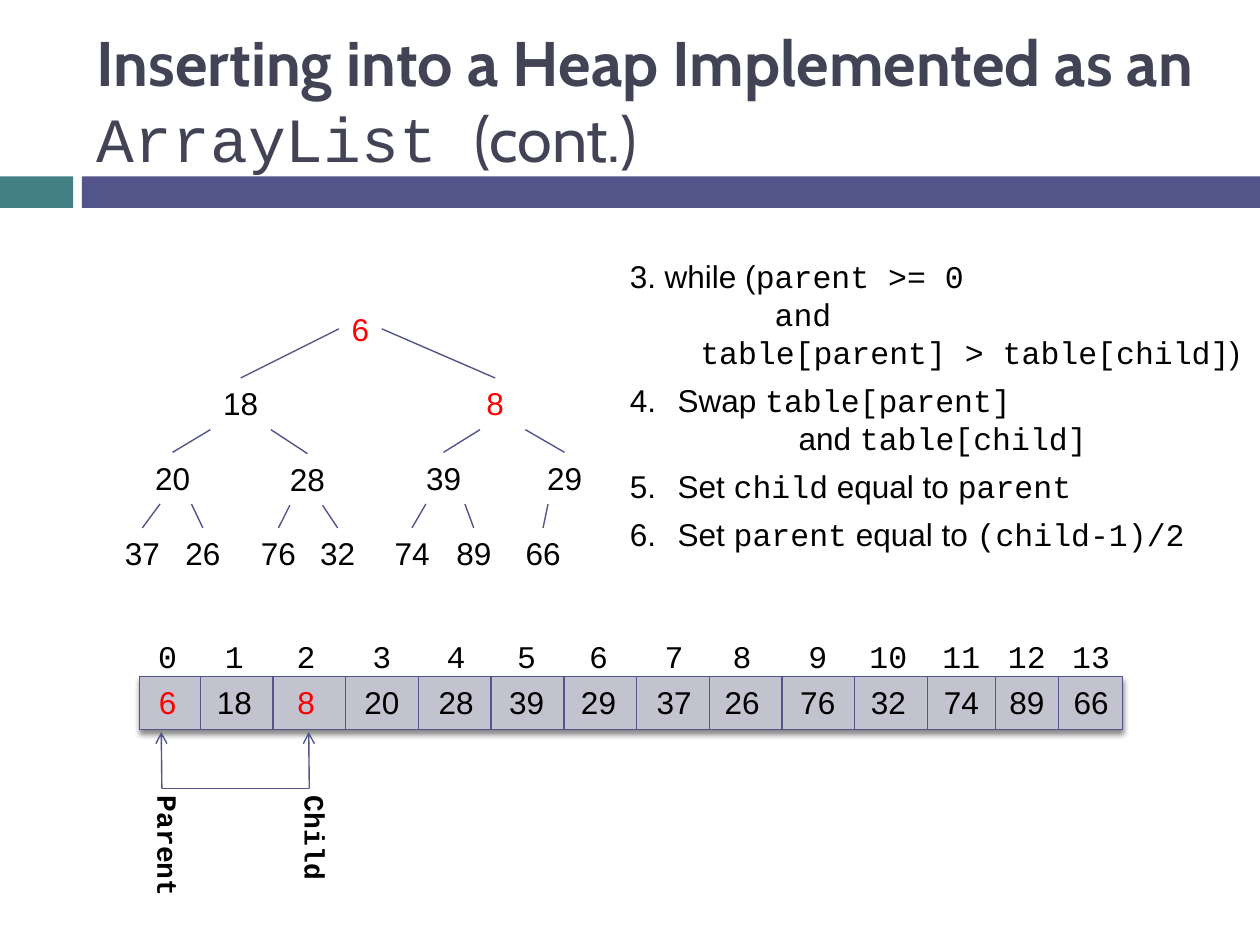
import pptx
import pptx.util
import pptx.dml.color
import pptx.enum.shapes
import pptx.enum.text
import pptx.oxml
import pptx.oxml.ns
import lxml.etree

Inches, Pt = pptx.util.Inches, pptx.util.Pt
RGBColor = pptx.dml.color.RGBColor
PURPLE = RGBColor(0x53, 0x54, 0x8A)
TEAL = RGBColor(0x43, 0x80, 0x86)
SLATE = RGBColor(0x42, 0x44, 0x56)
GREY = RGBColor(0xC3, 0xC3, 0xCF)
RED = RGBColor(0xFF, 0x00, 0x00)
BLACK = RGBColor(0x00, 0x00, 0x00)
CENTER = pptx.enum.text.PP_ALIGN.CENTER
MIDDLE = pptx.enum.text.MSO_ANCHOR.MIDDLE
RECTANGLE = pptx.enum.shapes.MSO_SHAPE.RECTANGLE
STRAIGHT = pptx.enum.shapes.MSO_CONNECTOR.STRAIGHT
qn = pptx.oxml.ns.qn

PLAIN = {"name": "Arial", "size": Pt(18)}
CODE = {"name": "Courier New", "size": Pt(18)}
POINTER = {"name": "Courier New", "size": Pt(16), "bold": True}

deck = pptx.Presentation()
deck.slide_width, deck.slide_height = Inches(10), Inches(7.5)
page = deck.slides.add_slide(deck.slide_layouts[6])


def add_label(text, left, top, width, height, font, color=BLACK):
    box = page.shapes.add_textbox(Inches(left), Inches(top), Inches(width), Inches(height))
    box.text_frame.word_wrap = False
    para = box.text_frame.paragraphs[0]
    para.alignment = CENTER
    span = para.add_run()
    span.text = text
    for name, value in font.items():
        setattr(span.font, name, value)
    span.font.color.rgb = color
    return box


def add_line(x1, y1, x2, y2):
    line = page.shapes.add_connector(STRAIGHT, Inches(x1), Inches(y1), Inches(x2), Inches(y2))
    line.line.color.rgb = PURPLE
    line.line.width = Pt(0.79)
    lxml.etree.SubElement(line._element.spPr, qn("a:effectLst"))
    return line


# Header bars and the array's background
bars = []
for left, top, width, height, color in [
    (0, 1.4, 0.58, 0.25, TEAL),
    (0.65, 1.4, 9.35, 0.25, PURPLE),
    (1.11, 5.37, 7.8, 0.42, GREY),
]:
    bar = page.shapes.add_shape(RECTANGLE, Inches(left), Inches(top), Inches(width), Inches(height))
    bar.shadow.inherit = False
    bar.fill.solid()
    bar.fill.fore_color.rgb = color
    bar.line.fill.background()
    bars.append(bar)

array = bars[-1]
array.line.color.rgb = PURPLE
array.line.width = Pt(0.79)
effects = array._element.spPr.find(qn("a:effectLst"))
shadow = lxml.etree.SubElement(
    effects, qn("a:outerShdw"), blurRad=str(Pt(3)), dist=str(Pt(2.4)), dir="5400000", rotWithShape="0")
shade = lxml.etree.SubElement(shadow, qn("a:srgbClr"), val="000000")
lxml.etree.SubElement(shade, qn("a:alpha"), val="45000")

# Title
title = page.shapes.add_textbox(Inches(0.67), Inches(0.25), Inches(8.92), Inches(1.08))
title.text_frame.word_wrap = True
title.text_frame.vertical_anchor = MIDDLE
for text, font in [
    ("Inserting into a Heap Implemented as an ", {"name": "Cabin", "bold": True}),
    ("ArrayList ", {"name": "Courier New"}),
    ("(cont.)", {"name": "Cabin"}),
]:
    span = title.text_frame.paragraphs[0].add_run()
    span.text = text
    for name, value in {"size": Pt(36), **font}.items():
        setattr(span.font, name, value)
    span.font.color.rgb = SLATE

# Heap tree: value, centre, top, start of the edge from the parent
heap = [
    (6, 2.86, 2.41, None), (18, 1.91, 3, 2.69), (8, 3.93, 3, 3.03),
    (20, 1.37, 3.59, 1.67), (28, 2.44, 3.6, 2.15), (39, 3.52, 3.59, 3.81), (29, 4.48, 3.59, 4.17),
    (37, 1.13, 4.19, 1.27), (26, 1.61, 4.19, 1.52), (76, 2.21, 4.19, 2.3), (32, 2.68, 4.19, 2.56),
    (74, 3.27, 4.19, 3.38), (89, 3.76, 4.19, 3.69), (66, 4.31, 4.19, 4.35),
]
MOVED = (6, 8)
nodes = []
for index, (value, center, top, start) in enumerate(heap):
    width = 0.34 if index == 0 else 0.48
    node = add_label(str(value), center - width / 2, top, width, 0.4, PLAIN,
                     RED if value in MOVED else BLACK)
    nodes.append(node)
    if index:
        parent = (index - 1) // 2
        edge = add_line(start, heap[parent][2] + 0.41, center, top)
        if parent == 0:
            edge.begin_connect(nodes[0], 1 if index == 1 else 3)
        edge.end_connect(node, 0)

# Array dividers, indices and values
for x in [1.59 + 0.577 * step for step in range(11)] + [7.9, 8.4]:
    add_line(x, 5.37, x, 5.79)
centers = [1.33, 1.86, 2.43, 3.03, 3.62, 4.18, 4.75, 5.35, 5.89, 6.49, 7.05, 7.63, 8.15, 8.66]
for index, center in enumerate(centers):
    value = heap[index][0]
    add_label(str(index), center - 0.25, 5.01, 0.5, 0.4, CODE)
    add_label(str(value), center - 0.24, 5.37, 0.48, 0.4, PLAIN, RED if value in MOVED else BLACK)

# Parent and child pointers
pointers = []
for text, center, height in [("Parent", 1.28, 0.91), ("Child", 2.45, 0.78)]:
    pointer = add_label(text, center - 0.23, 6.26, 0.47, height, POINTER)
    pointer.text_frame._txBody.bodyPr.set("vert", "vert")
    pointers.append(pointer)
    arrow = add_line(center, 6.26, center, 5.81)
    arrow.begin_connect(pointer, 0)
    lxml.etree.SubElement(arrow.line._get_or_add_ln(), qn("a:tailEnd"), type="arrow")
link = add_line(1.28, 6.26, 2.45, 6.26)
link.begin_connect(pointers[0], 0)
link.end_connect(pointers[1], 0)

# Algorithm steps: left margin, first-line indent, space after, list start, spans
steps = [
    (0.25, -0.25, 0, None, [("3. while (", PLAIN), ("parent >= 0", CODE)]),
    (1.15, 0, 0, None, [("and", CODE)]),
    (0.56, 0, 6, None, [("table[parent] > table[child]", CODE), (")", PLAIN)]),
    (0.38, -0.38, 0, 4, [("Swap ", PLAIN), ("table[parent]", CODE)]),
    (1.34, 0, 6, None, [("and ", PLAIN), ("table[child]", CODE)]),
    (0.38, -0.38, 6, 5, [("Set ", PLAIN), ("child", CODE), (" equal to ", PLAIN), ("parent", CODE)]),
    (0.38, -0.38, 6, 5, [("Set ", PLAIN), ("parent", CODE), (" equal to ", PLAIN), ("(child-1)/2", CODE)]),
]
box = page.shapes.add_textbox(Inches(4.9), Inches(1.99), Inches(5.24), Inches(2.47))
box.text_frame.word_wrap = True
for index, (margin, indent, after, start, spans) in enumerate(steps):
    para = box.text_frame.add_paragraph() if index else box.text_frame.paragraphs[0]
    para.space_after = Pt(after)
    properties = para._p.get_or_add_pPr()
    properties.set("marL", str(Inches(margin)))
    properties.set("indent", str(Inches(indent)))
    if start:
        lxml.etree.SubElement(properties, qn("a:buFont"), typeface="+mj-lt")
        lxml.etree.SubElement(properties, qn("a:buAutoNum"), type="arabicPeriod", startAt=str(start))
    for text, font in spans:
        span = para.add_run()
        span.text = text
        for name, value in font.items():
            setattr(span.font, name, value)
        span.font.color.rgb = BLACK

deck.save("out.pptx")
